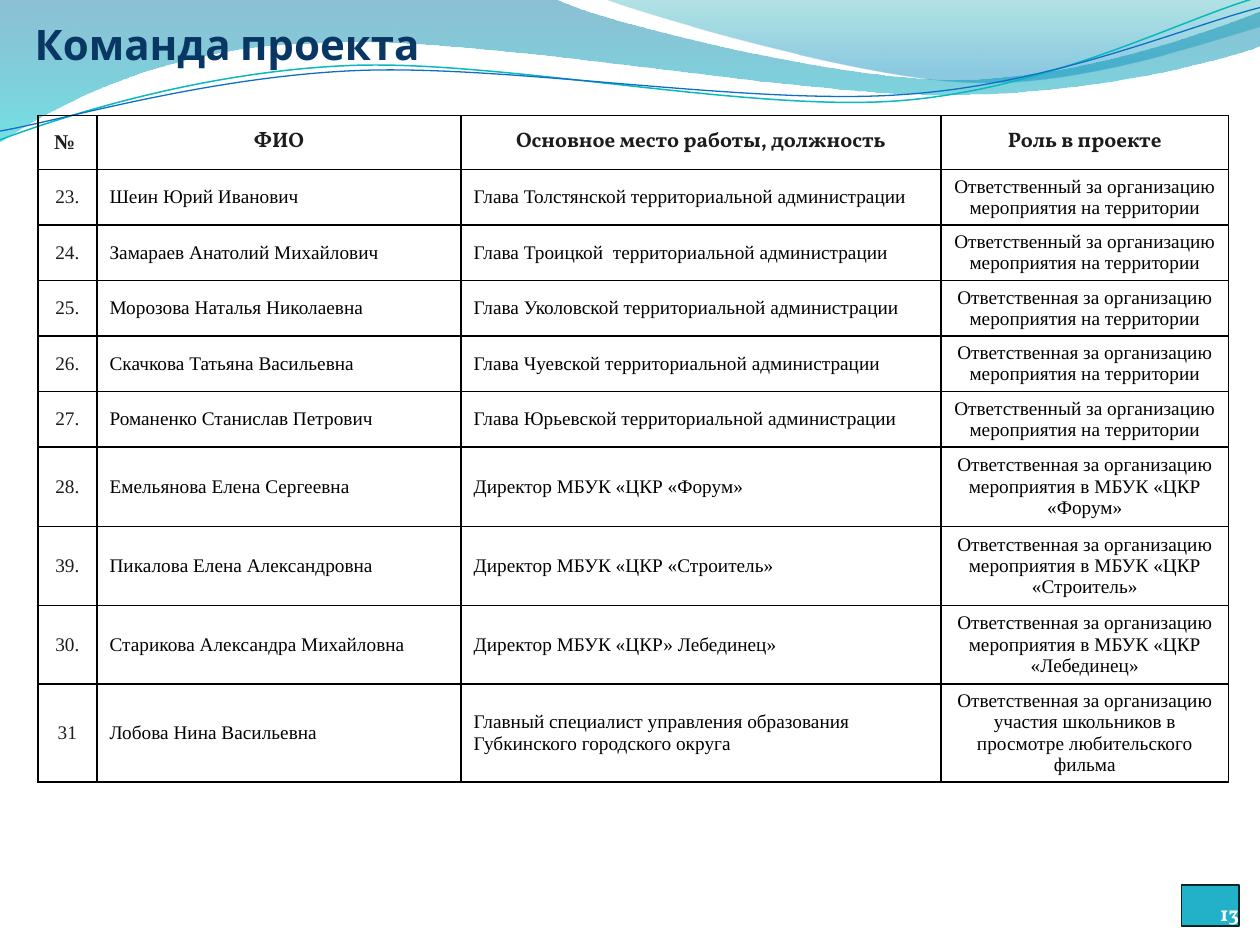
from math import cos, radians, sin

from pptx import Presentation
from pptx.dml.color import RGBColor
from pptx.enum.shapes import MSO_SHAPE
from pptx.enum.text import MSO_ANCHOR, MSO_AUTO_SIZE, PP_ALIGN
from pptx.oxml import parse_xml
from pptx.oxml.ns import nsdecls, qn
from pptx.util import Inches, Pt

COLS, ROWS = 100, 75
CELL = Inches(0.1)
TILT = 357.3

BLACK = RGBColor(0x00, 0x00, 0x00)
WHITE = RGBColor(0xFF, 0xFF, 0xFF)
DARK = RGBColor(0x1C, 0x1C, 0x1C)
NAVY = RGBColor(0x08, 0x37, 0x63)
TEAL = RGBColor(0x21, 0xB2, 0xC9)
INK = RGBColor(0x07, 0x24, 0x28)
AQUA = RGBColor(0x0A, 0xB8, 0xBF)
BLUE = RGBColor(0x0F, 0x6F, 0xC6)
DEEP = RGBColor(0x00, 0x74, 0xA1)
CYAN = RGBColor(0x00, 0xC6, 0xCF)
SEA = RGBColor(0x00, 0xA1, 0xA9)
SKY = RGBColor(0x00, 0x8B, 0xBF)

SERIF, TIMES = "Vollkorn", "Times New Roman"
LEFT, MID, RIGHT = PP_ALIGN.LEFT, PP_ALIGN.CENTER, PP_ALIGN.RIGHT

WIDE = [
    [(0, 0)], [(44, -0.1)],
    [(47.6, 1.7), (66.4, 6.3), (75.8, 6.3)],
    [(85.3, 6.3), (95.8, 2.6), (100, 0.9)], [(100.1, 3.6)],
    [(98.3, 4.4), (87, 7.6), (74.6, 7.5)],
    [(62.2, 7.5), (38.2, 2.8), (25.7, 3.4)],
    [(12.9, 3.6), (4.6, 8.3), (-0.1, 11.3)], [(0, 0)],
]
SMALL = [
    [(47.9, -0.1)],
    [(50.9, 1.1), (68.2, 6.2), (76.9, 6.5)],
    [(85.6, 6.9), (96.1, 3.2), (100, 2.1)], [(100, 0)], [(47.9, -0.1)],
]
UPPER = [
    [(0, 11.1)],
    [(4.8, 9.3), (15.8, 5.7), (27.7, 5.2)],
    [(39.5, 4.7), (59.3, 8.9), (71.3, 8)],
    [(83.3, 7.1), (93.8, 1.5), (99.8, -0.2)],
]
LOWER = [
    [(0, 10.4)],
    [(4.7, 9.6), (16.4, 6.1), (28.3, 5.6)],
    [(40.3, 5.1), (59.7, 8.4), (71.7, 7.5)],
    [(83.6, 6.7), (94.1, 2.1), (100, 0.6)],
]

WIDTHS = [4.7, 28.9, 38.1, 22.8]
HEIGHTS = [4.3, 0, 0, 0, 2.2, 0, 6.3, 6.3, 6.2, 7.7]
HEAD = ["№ ", "ФИО", "Основное место работы, должность", "Роль в проекте"]
HIS = "Ответственный за организацию "
HER = "Ответственная за организацию "
LAND = "мероприятия на территории"
CLUB = "мероприятия в МБУК «ЦКР "
TEAM = [
    ("23.", "Шеин Юрий Иванович", "Глава Толстянской территориальной администрации", HIS + LAND),
    ("24.", "Замараев Анатолий Михайлович", "Глава Троицкой  территориальной администрации", HIS + LAND),
    ("25.", "Морозова Наталья Николаевна", "Глава Уколовской территориальной администрации", HER + LAND),
    ("26.", "Скачкова Татьяна Васильевна", "Глава Чуевской территориальной администрации", HER + LAND),
    ("27.", "Романенко Станислав Петрович", "Глава Юрьевской территориальной администрации", HIS + LAND),
    ("28.", "Емельянова Елена Сергеевна", "Директор МБУК «ЦКР «Форум»", HER + CLUB + "«Форум»"),
    ("39.", "Пикалова Елена Александровна", "Директор МБУК «ЦКР «Строитель»", HER + CLUB + "«Строитель»"),
    ("30.", "Старикова Александра Михайловна", "Директор МБУК «ЦКР» Лебединец»", HER + CLUB + "«Лебединец»"),
    ("31", "Лобова Нина Васильевна", "Главный специалист управления образования Губкинского городского округа",
     HER + "участия школьников в просмотре любительского фильма"),
]


def grid(*cells):
    return [round(n * CELL) for n in cells]


def write(frame, text, font=TIMES, size=11, color=BLACK, bold=False, align=LEFT):
    part = frame.paragraphs[0]
    part.alignment = align
    run = part.add_run()
    run.text = text
    run.font.name = font
    run.font.size = Pt(size)
    run.font.bold = bold
    run.font.color.rgb = color


def inset(frame, top=0):
    frame.margin_left = frame.margin_right = frame.margin_bottom = 0
    frame.margin_top = round(top * CELL)
    frame.vertical_anchor = MSO_ANCHOR.BOTTOM
    frame.word_wrap = True


def trace(slide, legs, close):
    dots = [grid(*dot) for leg in legs for dot in leg]
    maker = slide.shapes.build_freeform(*dots[0], scale=1.0)
    maker.add_line_segments(dots[1:], close=close)
    shape = maker.convert_to_shape()
    shape.shadow.inherit = False
    lines = iter(list(shape.element.iter(qn("a:lnTo"))))
    for leg in legs[1:]:
        group = [next(lines) for _ in leg]
        if len(leg) == 3:
            bend = parse_xml(f'<a:cubicBezTo {nsdecls("a")}/>')
            group[0].addprevious(bend)
            for line in group:
                bend.append(line[0])
                line.getparent().remove(line)
    return shape


def wave(slide, legs, stops):
    shape = trace(slide, legs, True)
    shape.line.fill.background()
    shape.fill.gradient()
    shape.fill.gradient_angle = 270
    for stop, (place, color, _) in zip(shape.fill.gradient_stops, stops):
        stop.position = place
        stop.color.rgb = color
    for node, (_, _, alpha) in zip(shape.element.spPr.iter(qn("a:srgbClr")), stops):
        node.append(parse_xml(f'<a:alpha {nsdecls("a")} val="{alpha * 1000}"/>'))


def turn(legs, mid, angle):
    c, s = cos(radians(angle)), sin(radians(angle))
    mx, my = mid
    return [
        [(mx + (x - mx) * c - (y - my) * s, my + (x - mx) * s + (y - my) * c) for x, y in leg]
        for leg in legs
    ]


def curve(slide, legs, mid, color, width):
    shape = trace(slide, turn(legs, mid, -TILT), False)
    shape.rotation = TILT
    shape.fill.background()
    shape.line.color.rgb = color
    shape.line.width = Pt(width)


def title(slide, text):
    shape = slide.shapes.title
    shape.left, shape.top, shape.width, shape.height = grid(2.75, 0, 95, 5.5)
    inset(shape.text_frame, 0.5)
    shape.text_frame.auto_size = MSO_AUTO_SIZE.NONE
    write(shape.text_frame, text, font="Cabin", size=24, color=NAVY, bold=True)
    slide.shapes.element.append(shape.element)


def badge(slide, text):
    shape = slide.shapes.add_shape(MSO_SHAPE.RECTANGLE, *grid(93.75, 70.25, 4.6, 3.25))
    shape.shadow.inherit = False
    shape.fill.solid()
    shape.fill.fore_color.rgb = TEAL
    shape.line.color.rgb = INK
    shape.line.width = Pt(0.75)
    inset(shape.text_frame)
    write(shape.text_frame, text, font=SERIF, size=12, color=WHITE, bold=True, align=RIGHT)


def border(cell):
    cell.fill.background()
    props = cell._tc.get_or_add_tcPr()
    for i, side in enumerate("LRTB"):
        props.insert(i, parse_xml(
            f'<a:ln{side} {nsdecls("a")} w="{Pt(1)}"><a:solidFill>'
            f'<a:srgbClr val="{BLACK}"/></a:solidFill></a:ln{side}>'
        ))


def roster(slide):
    rows = [HEAD, *TEAM]
    place = grid(3, 9.15, sum(WIDTHS), 55.5)
    shape = slide.shapes.add_table(len(rows), len(HEAD), *place)
    table = shape.table
    for col, width in zip(table.columns, grid(*WIDTHS)):
        col.width = width
    for row, height in zip(table.rows, grid(*HEIGHTS)):
        row.height = height
    shape.height = place[3]
    for r, texts in enumerate(rows):
        for c, text in enumerate(texts):
            cell = table.cell(r, c)
            border(cell)
            cell.vertical_anchor = MSO_ANCHOR.MIDDLE
            head = r == 0
            write(
                cell.text_frame, text,
                font=SERIF if head and c else TIMES,
                size=12 if head else 11,
                color=DARK if head or c == 0 else BLACK,
                bold=head,
                align=MID if head or c in (0, 3) else LEFT,
            )


def main():
    deck = Presentation()
    deck.slide_width, deck.slide_height = grid(COLS, ROWS)
    slide = deck.slides.add_slide(deck.slide_layouts[5])
    wave(slide, WIDE, [(0, DEEP, 45), (1, CYAN, 55)])
    wave(slide, SMALL, [(0, SEA, 30), (0.8, SKY, 45)])
    curve(slide, UPPER, (49.9, 5.75), AQUA, 0.85)
    curve(slide, LOWER, (49.95, 5.9), BLUE, 0.75)
    title(slide, "Команда проекта")
    badge(slide, "13")
    roster(slide)
    deck.save("out.pptx")


if __name__ == "__main__":
    main()
